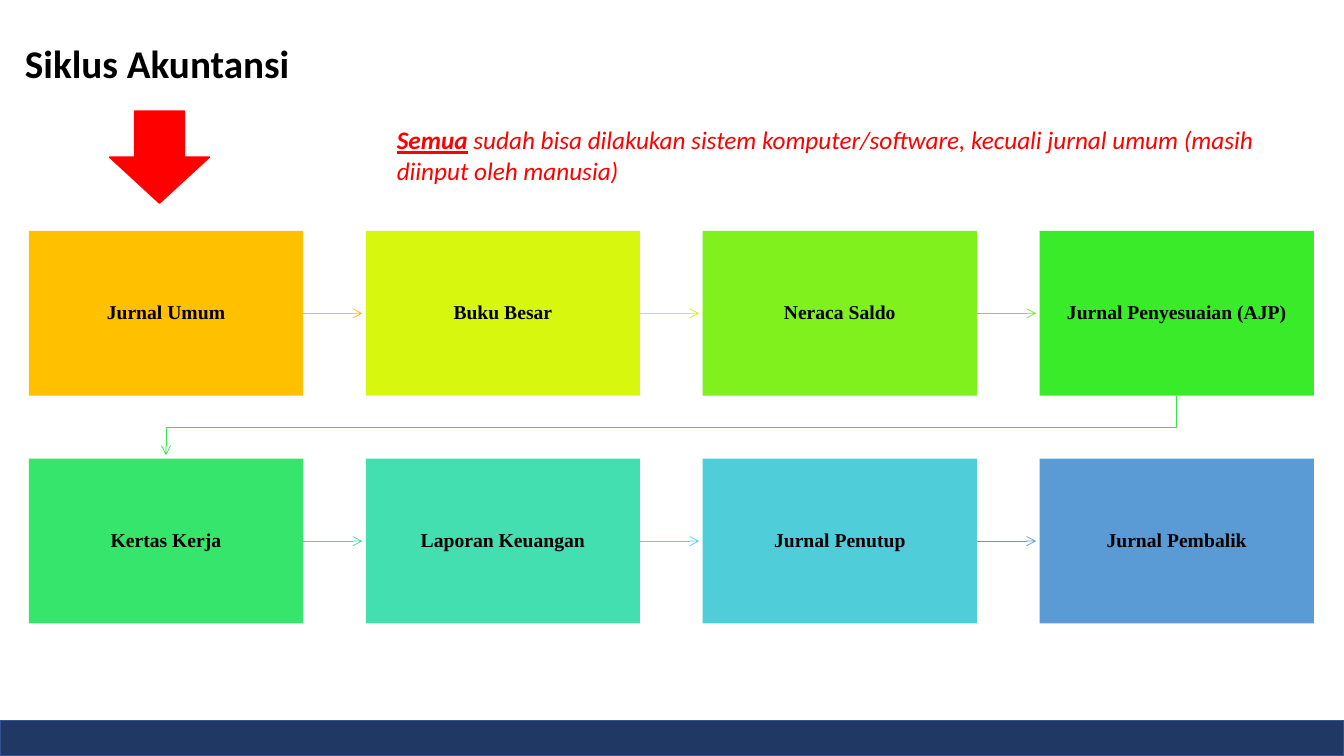
from lxml import etree
from pptx import Presentation
from pptx.dml.color import RGBColor
from pptx.enum.shapes import MSO_CONNECTOR, MSO_SHAPE
from pptx.enum.text import MSO_ANCHOR, MSO_AUTO_SIZE, PP_ALIGN
from pptx.oxml.ns import qn
from pptx.util import Cm, Pt

RECT = MSO_SHAPE.RECTANGLE
DOWN = MSO_SHAPE.DOWN_ARROW
LINE = MSO_CONNECTOR.STRAIGHT
MIDDLE = MSO_ANCHOR.MIDDLE
CENTER = PP_ALIGN.CENTER
GROW = MSO_AUTO_SIZE.SHAPE_TO_FIT_TEXT

COLS = 4
BOX_W, BOX_H = 6.91, 4.15
STEP_X, STEP_Y = 8.49, 5.74
TIP = 0.09  # space between an arrowhead and the next box

# Name, box fill, colour of the arrow to the next stage
STAGES = [
    ("Jurnal Umum", "FFC000", "FFC000"),
    ("Buku Besar", "D7F80E", "C7F711"),
    ("Neraca Saldo", "80F11C", "67EF21"),
    ("Jurnal Penyesuaian (AJP)", "39EB29", "30E845"),
    ("Kertas Kerja", "36E56C", "3FE19B"),
    ("Laporan Keuangan", "43DFB0", "4DD8DB"),
    ("Jurnal Penutup", "4FCEDA", "5B9BD5"),
    ("Jurnal Pembalik", "5B9BD5", None),
]


def color(code):
    return RGBColor.from_string(code)


def set_font(font, name, size, code, bold=None, italic=None):
    font.name, font.size = name, Pt(size)
    font.bold, font.italic = bold, italic
    font.color.rgb = color(code)


def add_block(slide, kind, box, fill, edge=None):
    block = slide.shapes.add_shape(kind, *map(Cm, box))
    block.shadow.inherit = False
    block.fill.solid()
    block.fill.fore_color.rgb = color(fill)
    if edge:
        block.line.color.rgb = color(edge)
        block.line.width = Pt(1)
    else:
        block.line.fill.background()
    return block


def add_stage(slide, box, name, fill):
    frame = add_block(slide, RECT, box, fill).text_frame
    frame.word_wrap = True
    frame.vertical_anchor = MIDDLE
    frame.margin_left = frame.margin_right = Cm(0.28)
    frame.margin_top = frame.margin_bottom = Cm(0.28)
    para = frame.paragraphs[0]
    para.text = name
    para.alignment = CENTER
    para.line_spacing = 0.9
    set_font(para.font, "Times New Roman", 14, "000000", bold=True)


def add_arrow(slide, points, code):
    """Join the points by a thin line with an open head at the last one."""
    spots = [(Cm(x), Cm(y)) for x, y in points]
    if len(spots) == 2:
        arrow = slide.shapes.add_connector(LINE, *spots[0], *spots[1])
        etree.SubElement(arrow.element.spPr, qn("a:effectLst"))
    else:
        builder = slide.shapes.build_freeform(*spots[0])
        builder.add_line_segments(spots[1:], close=False)
        arrow = builder.convert_to_shape()
        arrow.shadow.inherit = False
        arrow.fill.background()
    arrow.line.color.rgb = color(code)
    arrow.line.width = Pt(0.5)
    etree.SubElement(arrow.line._get_or_add_ln(), qn("a:tailEnd"), type="arrow")


def add_cycle(slide, left, top):
    """Place the stages row by row, each with an arrow to the next."""
    for i, (name, fill, code) in enumerate(STAGES):
        row, col = divmod(i, COLS)
        x, y = left + col * STEP_X, top + row * STEP_Y
        add_stage(slide, (x, y, BOX_W, BOX_H), name, fill)
        if not code:
            continue
        if col < COLS - 1:
            mid = y + BOX_H / 2
            points = [(x + BOX_W, mid), (x + STEP_X - TIP, mid)]
        else:
            start, end = x + BOX_W / 2, left + BOX_W / 2
            turn = y + (BOX_H + STEP_Y) / 2
            points = [(start, y + BOX_H), (start, turn),
                      (end, turn), (end, y + STEP_Y - TIP)]
        add_arrow(slide, points, code)


def add_text(slide, box, wrap):
    frame = slide.shapes.add_textbox(*map(Cm, box)).text_frame
    frame.word_wrap = wrap
    frame.auto_size = GROW
    return frame.paragraphs[0]


def add_title(slide, box):
    para = add_text(slide, box, False)
    para.text = "Siklus Akuntansi"
    set_font(para.font, "Calibri", 28, "000000", bold=True)


def add_note(slide, box):
    para = add_text(slide, box, True)
    set_font(para.font, "Calibri", 18, "FF0000", italic=True)
    lead = para.add_run()
    lead.text = "Semua"
    lead.font.bold = lead.font.underline = True
    para.add_run().text = (" sudah bisa dilakukan sistem komputer/software, "
                           "kecuali jurnal umum (masih diinput oleh manusia)")


def main():
    deck = Presentation()
    deck.slide_width, deck.slide_height = Cm(33.87), Cm(19.05)
    slide = deck.slides.add_slide(deck.slide_layouts[6])
    add_cycle(slide, 0.73, 5.82)
    add_block(slide, RECT, (0, 18.15, 33.87, 0.9), "203864", "325491")
    add_title(slide, (0.38, 0.87, 7.27, 1.45))
    add_note(slide, (9.75, 3.02, 23.4, 1.8))
    add_block(slide, DOWN, (2.76, 2.8, 2.52, 2.32), "FF0000", "FF0000")
    deck.save("out.pptx")


if __name__ == "__main__":
    main()
